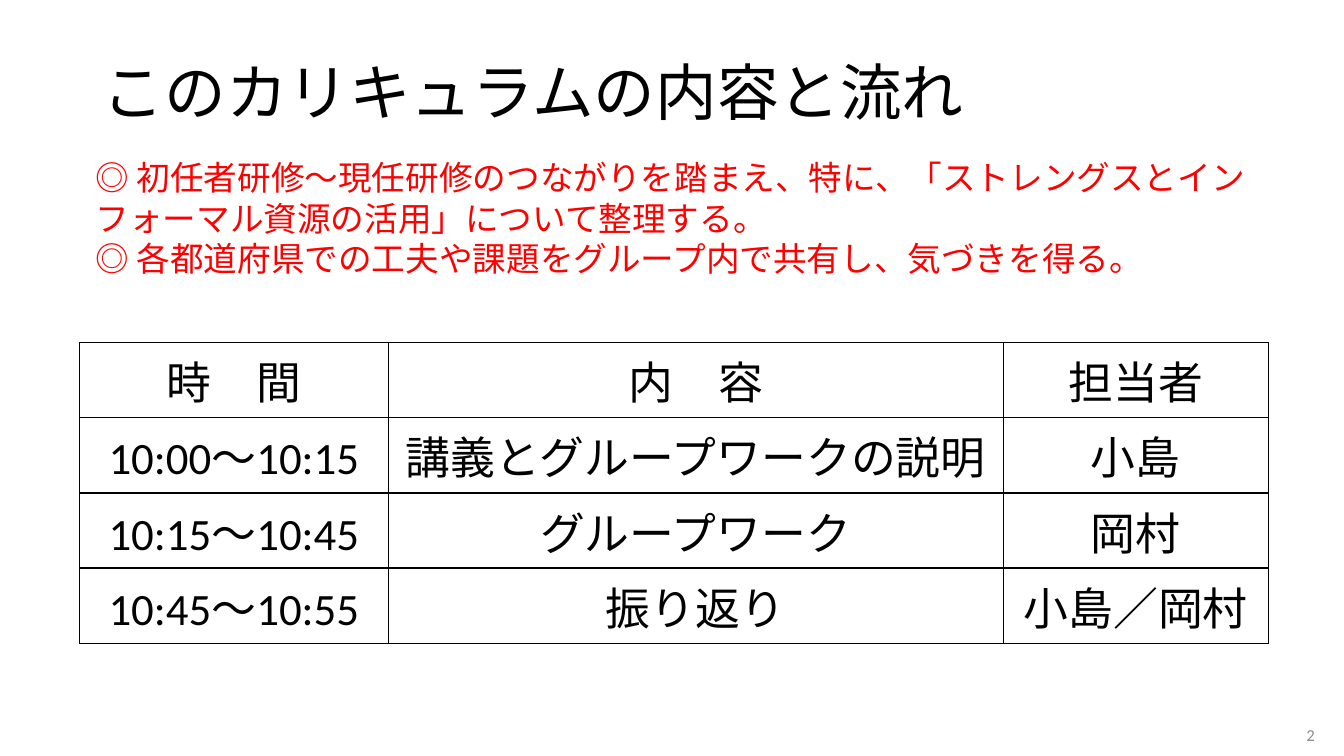
"""Build the slide that shows the contents and schedule of the curriculum."""
from dataclasses import dataclass

from lxml import etree
from pptx import Presentation
from pptx import util as u
from pptx.dml.color import RGBColor
from pptx.enum import lang, text
from pptx.oxml import ns

PX = 9144
FONT = "Calibri"
BLACK = RGBColor(0x00, 0x00, 0x00)
RED = RGBColor(0xFF, 0x00, 0x00)
GREY = RGBColor(0x8C, 0x8C, 0x8C)
LEFT, CENTER, RIGHT = text.PP_ALIGN.LEFT, text.PP_ALIGN.CENTER, text.PP_ALIGN.RIGHT


@dataclass(frozen=True)
class Area:
    left: int
    top: int
    width: int
    height: int

    def emu(self) -> tuple[int, ...]:
        return tuple(n * PX for n in (self.left, self.top, self.width, self.height))


@dataclass(frozen=True)
class Style:
    size: int
    color: RGBColor
    align: text.PP_ALIGN


@dataclass(frozen=True)
class Note:
    area: Area
    lines: tuple[str, ...]
    style: Style
    anchor: text.MSO_ANCHOR


@dataclass(frozen=True)
class Session:
    time: str
    content: str
    leader: str


TITLE = "このカリキュラムの内容と流れ"
TITLE_AREA = Area(92, 51, 1150, 88)
TITLE_STYLE = Style(44, BLACK, LEFT)
TABLE_AREA = Area(79, 340, 1179, 253)
TABLE_STYLE = Style(32, BLACK, CENTER)
COLUMNS = (306, 610, 263)
SESSIONS = (
    Session("時　間", "内　容", "担当者"),
    Session("10:00～10:15", "講義とグループワークの説明", "小島"),
    Session("10:15～10:45", "グループワーク", "岡村"),
    Session("10:45～10:55", "振り返り", "小島／岡村"),
)
NOTES = (
    Note(
        Area(85, 151, 1163, 131),
        (
            "◎ 初任者研修～現任研修のつながりを踏まえ、特に、「ストレングスとインフォーマル資源の活用」について整理する。",
            "◎ 各都道府県での工夫や課題をグループ内で共有し、気づきを得る。",
        ),
        Style(24, RED, LEFT),
        text.MSO_ANCHOR.TOP,
    ),
    Note(Area(1089, 709, 225, 40), ("2",), Style(12, GREY, RIGHT), text.MSO_ANCHOR.MIDDLE),
)


def format_text(frame, style: Style) -> None:
    for para in frame.paragraphs:
        para.alignment = style.align
        for span in para.runs:
            span.font.name = FONT
            span.font.size = u.Pt(style.size)
            span.font.color.rgb = style.color
            span.font.language_id = lang.MSO_LANGUAGE_ID.JAPANESE


def draw_title(page) -> None:
    title = page.shapes.title
    title.left, title.top, title.width, title.height = TITLE_AREA.emu()
    frame = title.text_frame
    frame.text = TITLE
    frame.auto_size = text.MSO_AUTO_SIZE.NONE
    frame.vertical_anchor = text.MSO_ANCHOR.MIDDLE
    frame.paragraphs[0].line_spacing = 0.9
    format_text(frame, TITLE_STYLE)


def draw_note(page, note: Note) -> None:
    frame = page.shapes.add_textbox(*note.area.emu()).text_frame
    frame.word_wrap = True
    frame.vertical_anchor = note.anchor
    frame.text = "\n".join(note.lines)
    format_text(frame, note.style)


def add_borders(cell) -> None:
    properties = cell._tc.get_or_add_tcPr()
    for side in ("lnL", "lnR", "lnT", "lnB"):
        line = etree.SubElement(properties, ns.qn(f"a:{side}"), w=str(u.Pt(1)))
        fill = etree.SubElement(line, ns.qn("a:solidFill"))
        etree.SubElement(fill, ns.qn("a:srgbClr"), val=str(BLACK))


def draw_schedule(page) -> None:
    table = page.shapes.add_table(len(SESSIONS), len(COLUMNS), *TABLE_AREA.emu()).table
    table.first_row = table.horz_banding = False
    for column, width in zip(table.columns, COLUMNS):
        column.width = width * PX
    for row, session in zip(table.rows, SESSIONS):
        for cell, words in zip(row.cells, (session.time, session.content, session.leader)):
            cell.text_frame.text = words
            format_text(cell.text_frame, TABLE_STYLE)
            add_borders(cell)
            cell.fill.background()


def main() -> None:
    deck = Presentation()
    deck.slide_width, deck.slide_height = 1333 * PX, 750 * PX
    page = deck.slides.add_slide(deck.slide_layouts.get_by_name("Title Only"))
    draw_title(page)
    draw_schedule(page)
    for note in NOTES:
        draw_note(page, note)
    deck.save("out.pptx")


if __name__ == "__main__":
    main()
